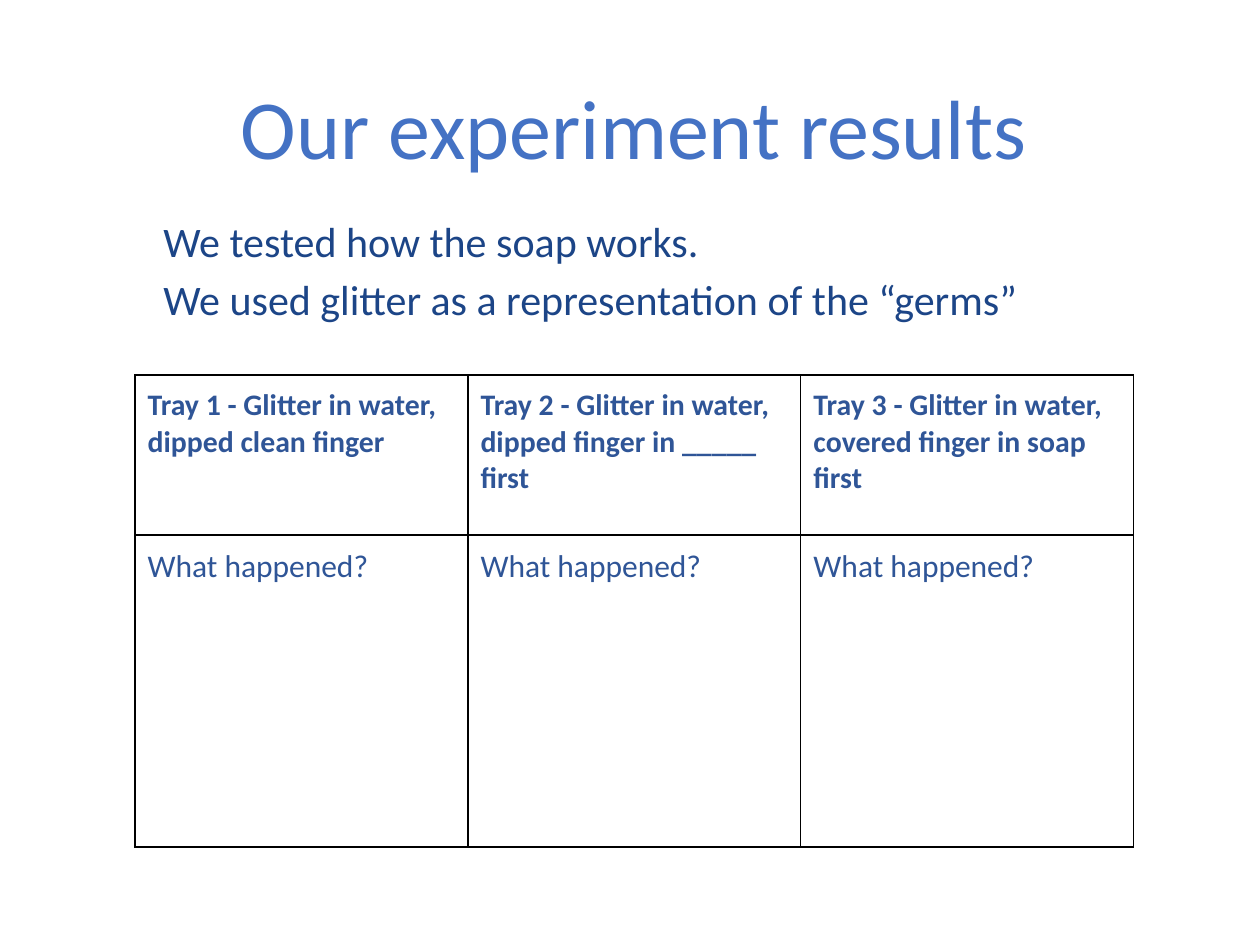
from lxml import etree
from pptx import Presentation
from pptx import util as u
from pptx.dml.color import RGBColor
from pptx.enum import text
from pptx.oxml.ns import qn

PX = 914400 / 126
FONT = "Calibri"
TRAYS = [
    "Tray 1 - Glitter in water, dipped clean finger",
    "Tray 2 - Glitter in water, dipped finger in _____ first",
    "Tray 3 - Glitter in water, covered finger in soap first",
]


def px(length):
    return u.Emu(round(length * PX))


def color(hex_code):
    return RGBColor.from_string(hex_code)


def add_run(paragraph, words, size, hex_code, bold=False):
    run = paragraph.add_run()
    run.text = words
    run.font.name = FONT
    run.font.size = u.Pt(size)
    run.font.bold = bold
    run.font.color.rgb = color(hex_code)


def add_text(slide, box, lines, size, hex_code, spacing, inset,
             align=text.PP_ALIGN.LEFT, anchor=text.MSO_ANCHOR.TOP):
    frame = slide.shapes.add_textbox(*map(px, box)).text_frame
    frame.word_wrap = True
    frame.vertical_anchor = anchor
    frame.margin_left = frame.margin_right = u.Inches(0.1)
    frame.margin_top = frame.margin_bottom = u.Inches(inset)
    for index, line in enumerate(lines):
        paragraph = frame.add_paragraph() if index else frame.paragraphs[0]
        paragraph.alignment = align
        paragraph.line_spacing = spacing
        add_run(paragraph, line, size, hex_code)


def add_borders(cell, width, hex_code):
    properties = cell._tc.get_or_add_tcPr()
    for side in ("a:lnL", "a:lnR", "a:lnT", "a:lnB"):
        line = etree.SubElement(properties, qn(side), w=str(u.Pt(width)))
        fill = etree.SubElement(line, qn("a:solidFill"))
        etree.SubElement(fill, qn("a:srgbClr"), val=hex_code)


def fill_cell(cell, words, size, bold):
    cell.margin_left = cell.margin_right = u.Inches(0.1)
    cell.margin_top = cell.margin_bottom = u.Inches(0.1)
    add_borders(cell, 0.75, "000000")
    cell.fill.background()
    add_run(cell.text_frame.paragraphs[0], words, size, "2F5597", bold)


def add_results_table(slide, left, top, column_width, row_heights):
    table = slide.shapes.add_table(
        len(row_heights), len(TRAYS), px(left), px(top),
        px(column_width * len(TRAYS)), px(sum(row_heights))).table
    table.first_row = table.horz_banding = False
    for row, height in zip(table.rows, row_heights):
        row.height = px(height)
    for index, tray in enumerate(TRAYS):
        table.columns[index].width = px(column_width)
        fill_cell(table.cell(0, index), tray, 17, True)
        fill_cell(table.cell(1, index), "What happened?", 18, False)


def main():
    deck = Presentation()
    deck.slide_width, deck.slide_height = px(1260), px(945)
    slide = deck.slides.add_slide(deck.slide_layouts[6])
    add_text(slide, (77, 69, 1114, 127), ["Our experiment results"],
             48, "4472C4", 0.9, 0.05,
             text.PP_ALIGN.CENTER, text.MSO_ANCHOR.MIDDLE)
    add_results_table(slide, 135, 375, 333, (160, 312))
    add_text(slide, (151, 195, 946, 180),
             ["We tested how the soap works.",
              "We used glitter as a representation of the “germs”"],
             24, "1C4587", 1.15, 0.1)
    deck.save("out.pptx")


if __name__ == "__main__":
    main()
